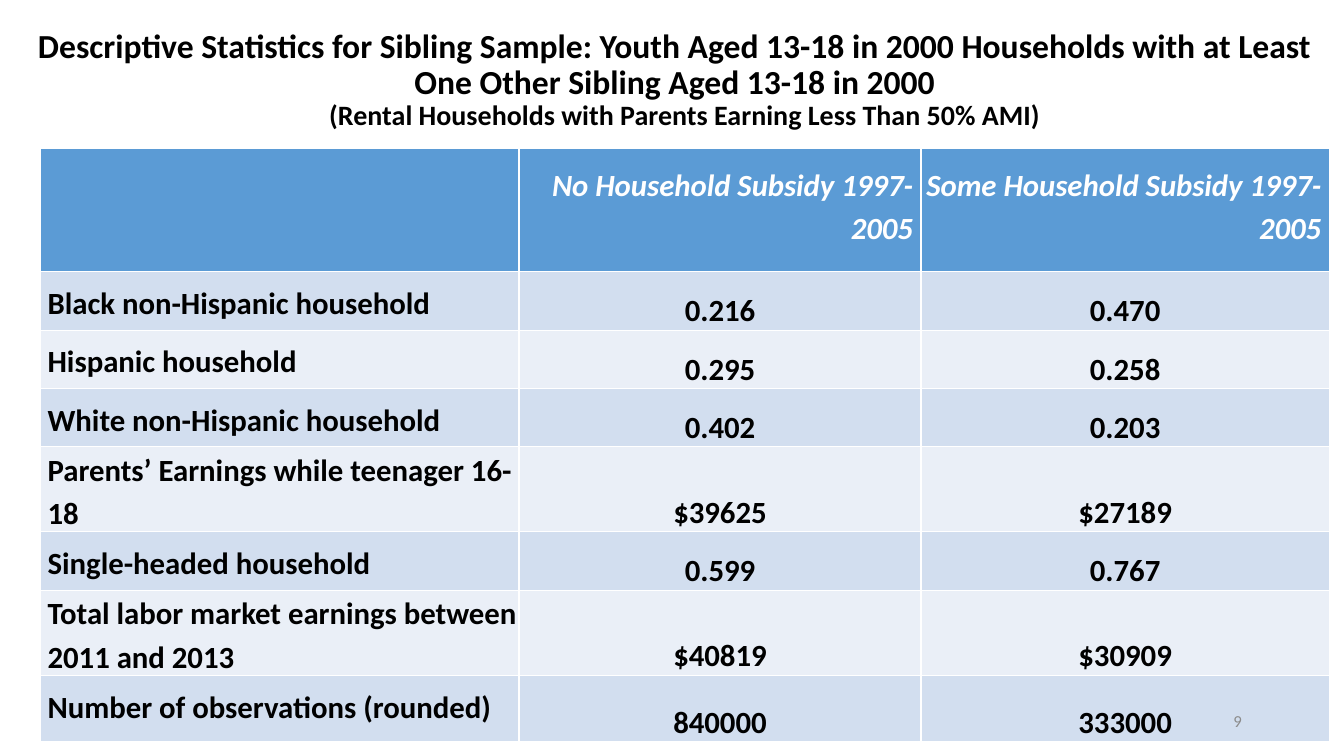
from pptx import Presentation
from pptx.dml.color import RGBColor
from pptx.enum.text import MSO_ANCHOR as Anchor, PP_ALIGN as Align
from pptx.util import Cm, Pt

HEADER_FILL, BAND_FILLS = "5B9BD5", ("D2DEEF", "EAEFF7")
HEADERS = ("", "No Household Subsidy 1997-2005", "Some Household Subsidy 1997-2005")
ROWS = (
    ("Black non-Hispanic household", "0.216", "0.470"),
    ("Hispanic household", "0.295", "0.258"),
    ("White non-Hispanic household", "0.402", "0.203"),
    ("Parents’ Earnings while teenager 16-18", "$39625", "$27189"),
    ("Single-headed household", "0.599", "0.767"),
    ("Total labor market earnings between 2011 and 2013", "$40819", "$30909"),
    ("Number of observations (rounded)", "840000", "333000"),
)
COLUMN_WIDTHS = (12.06, 10.13, 10.29)
ROW_HEIGHTS = (3.12,) + (1.47,) * 6 + (1.68,)


def color(hex_code):
    return RGBColor.from_string(hex_code)


def write(paragraph, text, size, hex_code, align, spacing=1.0, **styles):
    """Fill a paragraph with one formatted run."""
    paragraph.alignment = align
    paragraph.line_spacing = spacing
    run = paragraph.add_run()
    run.text = text
    formats = {"name": "Calibri", "size": Pt(size), "bold": True, **styles}
    for name, value in formats.items():
        setattr(run.font, name, value)
    run.font.color.rgb = color(hex_code)


presentation = Presentation()
presentation.slide_width, presentation.slide_height = Cm(33.87), Cm(19.05)
slide = presentation.slides.add_slide(presentation.slide_layouts[6])

# Title
title = slide.shapes.add_textbox(Cm(0.15), Cm(0), Cm(33.71), Cm(4.06)).text_frame
title.word_wrap = True
title.vertical_anchor = Anchor.MIDDLE
write(title.paragraphs[0],
      "Descriptive Statistics for Sibling Sample: Youth Aged 13-18 in 2000 "
      "Households with at Least One Other Sibling Aged 13-18 in 2000",
      24, "000000", Align.CENTER, 0.9)
subtitle = title.add_paragraph()
write(subtitle, "(Rental Households with Parents Earning Less Than 50% AMI)",
      20, "000000", Align.CENTER, 0.9)
subtitle._p.get_or_add_pPr().set("marL", str(Cm(0.5)))

# Statistics table
table = slide.shapes.add_table(
    len(ROWS) + 1, len(HEADERS), Cm(1.02), Cm(3.73),
    Cm(sum(COLUMN_WIDTHS)), Cm(sum(ROW_HEIGHTS))).table
for column, width in zip(table.columns, COLUMN_WIDTHS):
    column.width = Cm(width)
for row, height in zip(table.rows, ROW_HEIGHTS):
    row.height = Cm(height)

for row_index, texts in enumerate((HEADERS,) + ROWS):
    is_header = row_index == 0
    fill = HEADER_FILL if is_header else BAND_FILLS[(row_index - 1) % 2]
    for column_index, text in enumerate(texts):
        is_label = column_index == 0
        cell = table.cell(row_index, column_index)
        cell.fill.solid()
        cell.fill.fore_color.rgb = color(fill)
        margins = {
            "margin_left": Cm(0.18 if is_label else 0),
            "margin_right": Cm(0.2 if is_header else 0),
            "margin_top": Cm(0.35 if is_header else 0),
            "margin_bottom": Cm(0),
        }
        for name, value in margins.items():
            setattr(cell, name, value)
        paragraph = cell.text_frame.paragraphs[0]
        if is_header:
            cell.vertical_anchor = Anchor.TOP
            if text:
                write(paragraph, text, 22, "FFFFFF", Align.RIGHT, 1.15, italic=True)
        elif is_label:
            cell.vertical_anchor = Anchor.MIDDLE
            spacing = 1.0 if row_index == len(ROWS) else 1.15
            write(paragraph, text, 22, "000000", Align.LEFT, spacing)
        else:
            cell.vertical_anchor = Anchor.BOTTOM
            write(paragraph, text, 22, "000000", Align.CENTER)

# Slide number
number = slide.shapes.add_textbox(Cm(23.93), Cm(17.65), Cm(7.62), Cm(1.02)).text_frame
number.word_wrap = True
number.vertical_anchor = Anchor.MIDDLE
write(number.paragraphs[0], "9", 12, "8C8C8C", Align.RIGHT, bold=False)

presentation.save("out.pptx")
